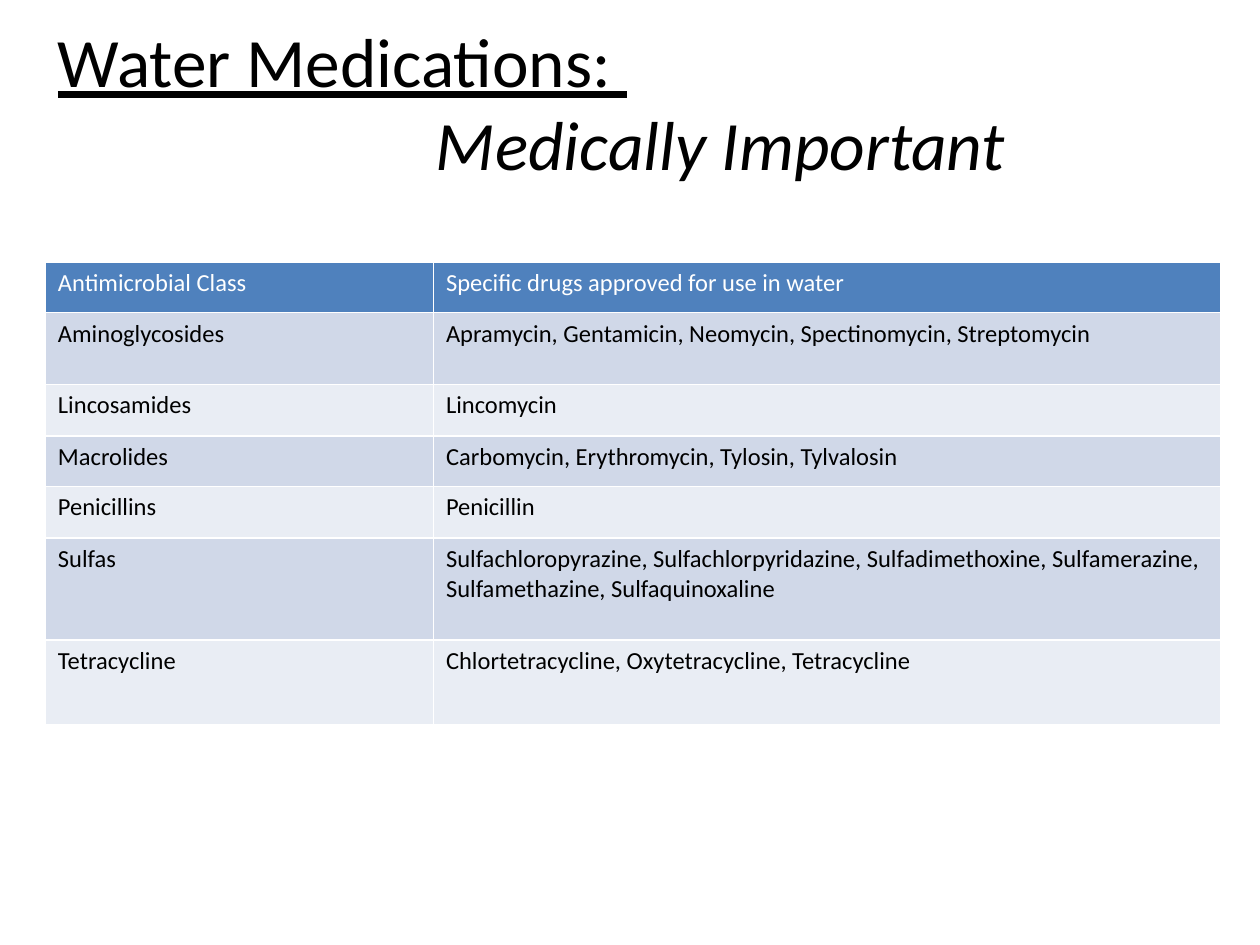
from dataclasses import dataclass

from lxml import etree
from pptx import Presentation
from pptx.dml.color import RGBColor
from pptx.enum import text
from pptx.oxml import ns
from pptx.util import Inches, Pt


@dataclass(frozen=True)
class Theme:
    font: str = "Calibri"
    title: float = 39.6
    body: float = 14
    ink: str = "000000"
    white: str = "FFFFFF"
    head: str = "4F81BD"
    bands: tuple = ("D0D8E8", "E9EDF4")


THEME = Theme()
COLS = (3.08, 6.25)
ROWS = (
    (0.4, "Antimicrobial Class", "Specific drugs approved for use in water"),
    (0.57, "Aminoglycosides",
     "Apramycin, Gentamicin, Neomycin, Spectinomycin, Streptomycin"),
    (0.41, "Lincosamides", "Lincomycin"),
    (0.4, "Macrolides", "Carbomycin, Erythromycin, Tylosin, Tylvalosin"),
    (0.41, "Penicillins", "Penicillin"),
    (0.81, "Sulfas",
     "Sulfachloropyrazine, Sulfachlorpyridazine, Sulfadimethoxine, "
     "Sulfamerazine, Sulfamethazine, Sulfaquinoxaline"),
    (0.67, "Tetracycline", "Chlortetracycline, Oxytetracycline, Tetracycline"),
)


def add_run(para, words, size, color):
    run = para.add_run()
    run.text = words
    run.font.name = THEME.font
    run.font.size = Pt(size)
    run.font.bold = False
    run.font.color.rgb = RGBColor.from_string(color)
    return run


def add_title(slide):
    title = slide.shapes.title
    title.left, title.top = Inches(0.36), Inches(0.11)
    title.width, title.height = Inches(9), Inches(1.39)
    frame = title.text_frame
    frame.auto_size = text.MSO_AUTO_SIZE.NONE
    frame.vertical_anchor = text.MSO_ANCHOR.MIDDLE
    first, second = frame.paragraphs[0], frame.add_paragraph()
    for para in (first, second):
        para.alignment = text.PP_ALIGN.LEFT
    add_run(first, "Water Medications: ", THEME.title, THEME.ink).font.underline = True
    second._p.get_or_add_pPr().set("marL", str(Inches(3)))
    add_run(second, "Medically Important", THEME.title, THEME.ink).font.italic = True


def add_edges(cell):
    """Draw a thin white line on every side; edges must precede the fill."""
    props = cell._tc.get_or_add_tcPr()
    for side in ("a:lnL", "a:lnR", "a:lnT", "a:lnB"):
        line = etree.SubElement(props, ns.qn(side), w=str(Pt(1)))
        fill = etree.SubElement(line, ns.qn("a:solidFill"))
        etree.SubElement(fill, ns.qn("a:srgbClr"), val=THEME.white)


def fill_cell(cell, words, back, color):
    add_edges(cell)
    cell.fill.solid()
    cell.fill.fore_color.rgb = RGBColor.from_string(back)
    add_run(cell.text_frame.paragraphs[0], words, THEME.body, color)


def add_drugs(slide):
    high = sum(row[0] for row in ROWS)
    frame = slide.shapes.add_table(len(ROWS), len(COLS), Inches(0.36), Inches(2.08),
                                   Inches(sum(COLS)), Inches(high))
    table = frame.table
    for col, width in zip(table.columns, COLS):
        col.width = Inches(width)
    for i, (height, *words) in enumerate(ROWS):
        table.rows[i].height = Inches(height)
        back = THEME.bands[(i - 1) % 2] if i else THEME.head
        color = THEME.ink if i else THEME.white
        for j, word in enumerate(words):
            fill_cell(table.cell(i, j), word, back, color)


def main():
    deck = Presentation()
    deck.slide_width, deck.slide_height = Inches(10), Inches(7.5)
    slide = deck.slides.add_slide(deck.slide_layouts[5])
    add_title(slide)
    add_drugs(slide)
    deck.save("out.pptx")


if __name__ == "__main__":
    main()
